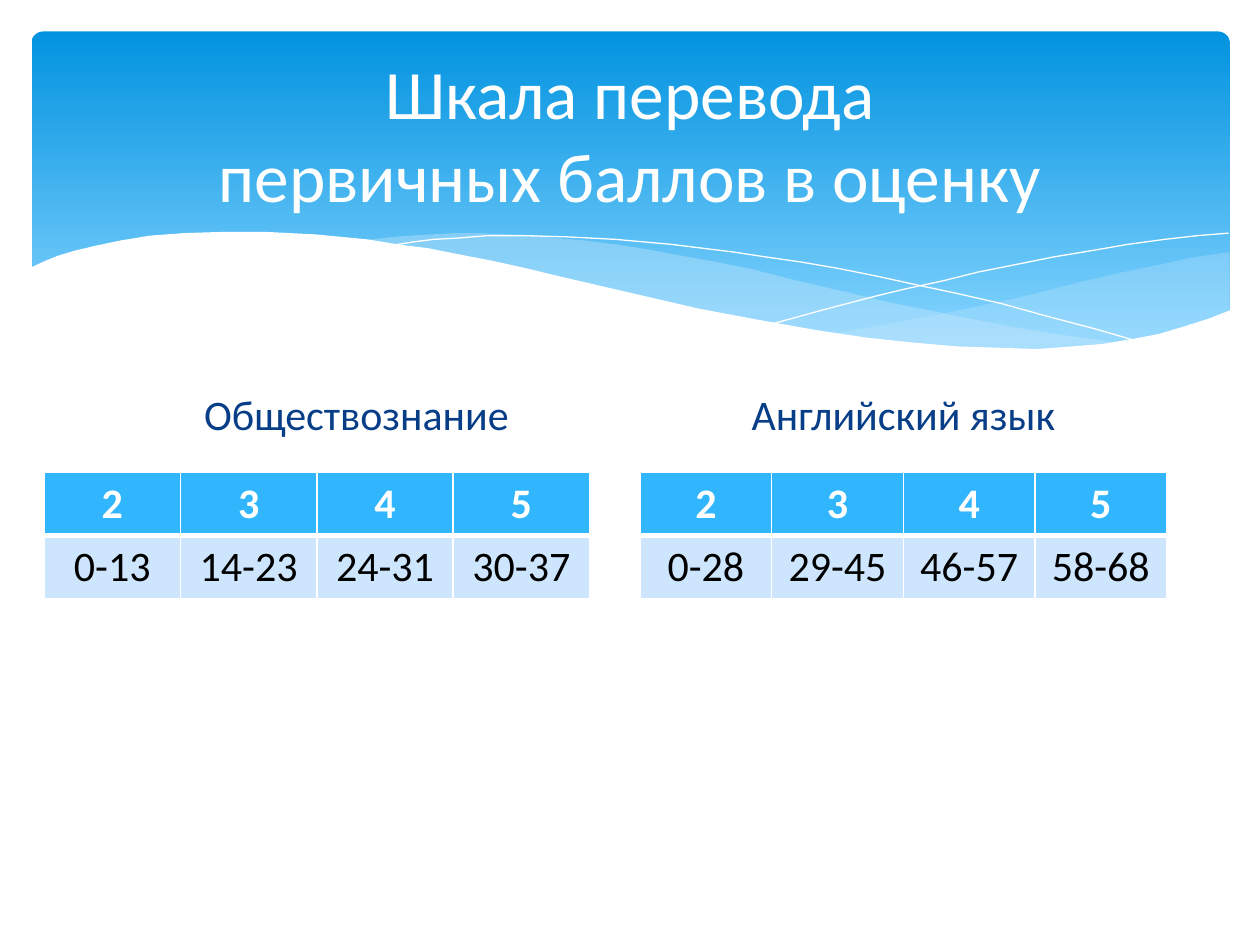
"""Builds a slide with two tables that convert raw exam points to grades."""
from lxml import etree
from pptx import Presentation
from pptx.dml.color import RGBColor
from pptx.enum.shapes import MSO_SHAPE
from pptx.enum.text import MSO_ANCHOR, PP_ALIGN
from pptx.oxml.ns import qn
from pptx.util import Inches, Pt

ROUNDED = MSO_SHAPE.ROUNDED_RECTANGLE
CENTER, MIDDLE = PP_ALIGN.CENTER, MSO_ANCHOR.MIDDLE

COLORS = {
    "white": "FFFFFF", "black": "000000", "navy": "073E87",
    "banner_top": "0293E0", "banner_bottom": "83D3FE", "wave": "C6E7FC",
    "header": "31B6FD", "body": "CEE5FE",
}
TITLE = "Шкала перевода\vпервичных баллов в оценку"
GRADES = ["2", "3", "4", "5"]
SUBJECTS = [
    {"name": "Обществознание", "heading_left": 0.74, "left": 0.35,
     "width": 4.33, "points": ["0-13", "14-23", "24-31", "30-37"]},
    {"name": "Английский язык", "heading_left": 5.08, "left": 5.08,
     "width": 4.18, "points": ["0-28", "29-45", "46-57", "58-68"]},
]
HEADING_WIDTH, TABLE_TOP, ROW_HEIGHT = 4.18, 3.75, 0.5
ROW_STYLES = [
    {"fill": "header", "color": "white", "bold": True,
     "borders": {"L": 1, "R": 1, "T": 1, "B": 3}},
    {"fill": "body", "color": "black", "bold": False,
     "borders": {"L": 1, "R": 1, "T": 3, "B": 1}},
]

RIGHT_WAVE = [
    (9.76, 2), (9.48, 2.04), (9.21, 2.1), (8.91, 2.16), (8.61, 2.23),
    (8.05, 2.37), (7.53, 2.48), (7.06, 2.57), (6.61, 2.65), (6.91, 2.69),
    (7.19, 2.72), (7.45, 2.75), (7.69, 2.77), (8.03, 2.78), (8.35, 2.77),
    (8.63, 2.75), (8.89, 2.72), (9.13, 2.67), (9.35, 2.62), (9.49, 2.57),
    (9.63, 2.52), (9.76, 2.47),
]
LEFT_WAVE = [
    (8.93, 2.73), (8.66, 2.69), (8.37, 2.65), (8.07, 2.6), (7.75, 2.54),
    (7.41, 2.47), (7.06, 2.4), (6.68, 2.31), (6.29, 2.22), (5.98, 2.14),
    (5.69, 2.08), (5.41, 2.03), (5.14, 1.98), (4.89, 1.94), (4.65, 1.91),
    (4.42, 1.89), (4.2, 1.87), (3.99, 1.86), (3.8, 1.85), (3.61, 1.85),
    (3.44, 1.86), (3.28, 1.87), (3.13, 1.88), (2.86, 1.91), (3.23, 1.96),
    (3.62, 2.03), (4.04, 2.11), (4.49, 2.22), (4.91, 2.32), (5.3, 2.4),
    (5.66, 2.48), (6.01, 2.55), (6.34, 2.61), (6.65, 2.66), (6.95, 2.7),
    (7.22, 2.74), (7.48, 2.76), (7.73, 2.77), (7.96, 2.78), (8.28, 2.78),
    (8.57, 2.77), (8.76, 2.75),
]
FALLING_LINE = [
    (3.09, 1.95), (3.28, 1.92), (3.44, 1.9), (3.63, 1.89), (3.87, 1.87),
    (4.16, 1.87), (4.5, 1.88), (4.89, 1.9), (5.33, 1.94), (5.82, 2),
    (6.08, 2.04), (6.36, 2.08), (6.65, 2.13), (6.95, 2.19), (7.27, 2.26),
    (7.6, 2.33), (7.95, 2.41), (8.31, 2.51), (8.69, 2.61), (9.07, 2.72),
]
RISING_LINE = [
    (6.13, 2.57), (6.53, 2.46), (6.95, 2.35), (7.2, 2.29), (7.48, 2.23),
    (7.76, 2.16), (8.06, 2.1), (8.36, 2.04), (8.66, 1.99), (8.95, 1.94),
    (9.24, 1.9), (9.51, 1.87), (9.75, 1.85),
]
WHITE_WAVE = [
    (9.77, 2.46), (9.59, 2.53), (9.4, 2.59), (9.2, 2.65), (8.99, 2.69),
    (8.75, 2.73), (8.5, 2.75), (8.23, 2.77), (7.93, 2.76), (7.61, 2.75),
    (7.26, 2.72), (6.88, 2.68), (6.48, 2.62), (6.03, 2.54), (5.55, 2.45),
    (5.03, 2.33), (4.47, 2.2), (4.18, 2.13), (3.91, 2.07), (3.65, 2.02),
    (3.4, 1.97), (3.16, 1.94), (2.92, 1.9), (2.71, 1.88), (2.5, 1.86),
    (2.3, 1.85), (2.11, 1.84), (1.77, 1.84), (1.46, 1.85), (1.19, 1.87),
    (0.95, 1.91), (0.76, 1.95), (0.59, 1.99), (0.46, 2.03), (0.36, 2.07),
    (0.23, 2.13), (0.23, 3.29), (9.77, 3.29),
]
CURVES = [
    {"points": RIGHT_WAVE, "fill": "wave", "opacity": 29},
    {"points": LEFT_WAVE, "fill": "wave", "opacity": 40},
    {"points": FALLING_LINE, "line": "white"},
    {"points": RISING_LINE, "line": "white"},
    {"points": WHITE_WAVE, "fill": "white", "opacity": 100},
]


def rgb(name):
    return RGBColor.from_string(COLORS[name])


def write(frame, text, color, **font_values):
    para = frame.paragraphs[0]
    para.text = text
    para.alignment = CENTER
    for span in para.runs:
        span.font.color.rgb = rgb(color)
        for name, value in {"name": "Calibri", **font_values}.items():
            setattr(span.font, name, value)


def add_text(page, area, text, color, size):
    box = page.shapes.add_textbox(*map(Inches, area))
    box.text_frame.word_wrap = True
    box.text_frame.vertical_anchor = MIDDLE
    write(box.text_frame, text, color, size=Pt(size))


def add_banner(page):
    banner = page.shapes.add_shape(ROUNDED, *map(Inches, (0.25, 0.25, 9.51, 2.7)))
    banner.adjustments[0] = 0.034
    banner.shadow.inherit = False
    banner.line.fill.background()
    banner.fill.gradient()
    banner.fill.gradient_angle = 270
    stops = [(0, "banner_top"), (0.9, "banner_bottom")]
    for stop, (position, color) in zip(banner.fill.gradient_stops, stops):
        stop.position = position
        stop.color.rgb = rgb(color)


def add_curve(page, curve):
    start, *rest = [tuple(map(Inches, point)) for point in curve["points"]]
    builder = page.shapes.build_freeform(*start)
    builder.add_line_segments(rest, close="fill" in curve)
    shape = builder.convert_to_shape()
    shape.shadow.inherit = False
    if "fill" in curve:
        shape.line.fill.background()
        shape.fill.solid()
        shape.fill.fore_color.rgb = rgb(curve["fill"])
        color = shape.fill._xPr.find(".//" + qn("a:srgbClr"))
        etree.SubElement(color, qn("a:alpha"), val=str(curve["opacity"] * 1000))
    else:
        shape.fill.background()
        shape.line.color.rgb = rgb(curve["line"])
        shape.line.width = 0


def set_borders(cell, borders):
    properties = cell._tc.get_or_add_tcPr()
    for index, (side, width) in enumerate(borders.items()):
        line = etree.Element(qn("a:ln" + side), w=str(Pt(width)))
        fill = etree.SubElement(line, qn("a:solidFill"))
        etree.SubElement(fill, qn("a:srgbClr"), val=COLORS["white"])
        properties.insert(index, line)


def add_scale(page, subject):
    rows = [GRADES, subject["points"]]
    area = (subject["left"], TABLE_TOP, subject["width"], ROW_HEIGHT * len(rows))
    table = page.shapes.add_table(len(rows), len(GRADES), *map(Inches, area)).table
    for row, (values, style) in enumerate(zip(rows, ROW_STYLES)):
        for column, value in enumerate(values):
            cell = table.cell(row, column)
            cell.fill.solid()
            cell.fill.fore_color.rgb = rgb(style["fill"])
            set_borders(cell, style["borders"])
            write(cell.text_frame, value, style["color"], size=Pt(24), bold=style["bold"])


def main():
    deck = Presentation()
    deck.slide_width, deck.slide_height = Inches(10), Inches(7.5)
    page = deck.slides.add_slide(deck.slide_layouts[6])
    add_banner(page)
    for curve in CURVES:
        add_curve(page, curve)
    add_text(page, (0.5, 0.37, 9, 1.37), TITLE, "white", 39.6)
    for subject in SUBJECTS:
        heading = (subject["heading_left"], 2.93, HEADING_WIDTH, 0.7)
        add_text(page, heading, subject["name"], "navy", 24)
        add_scale(page, subject)
    deck.save("out.pptx")


if __name__ == "__main__":
    main()
